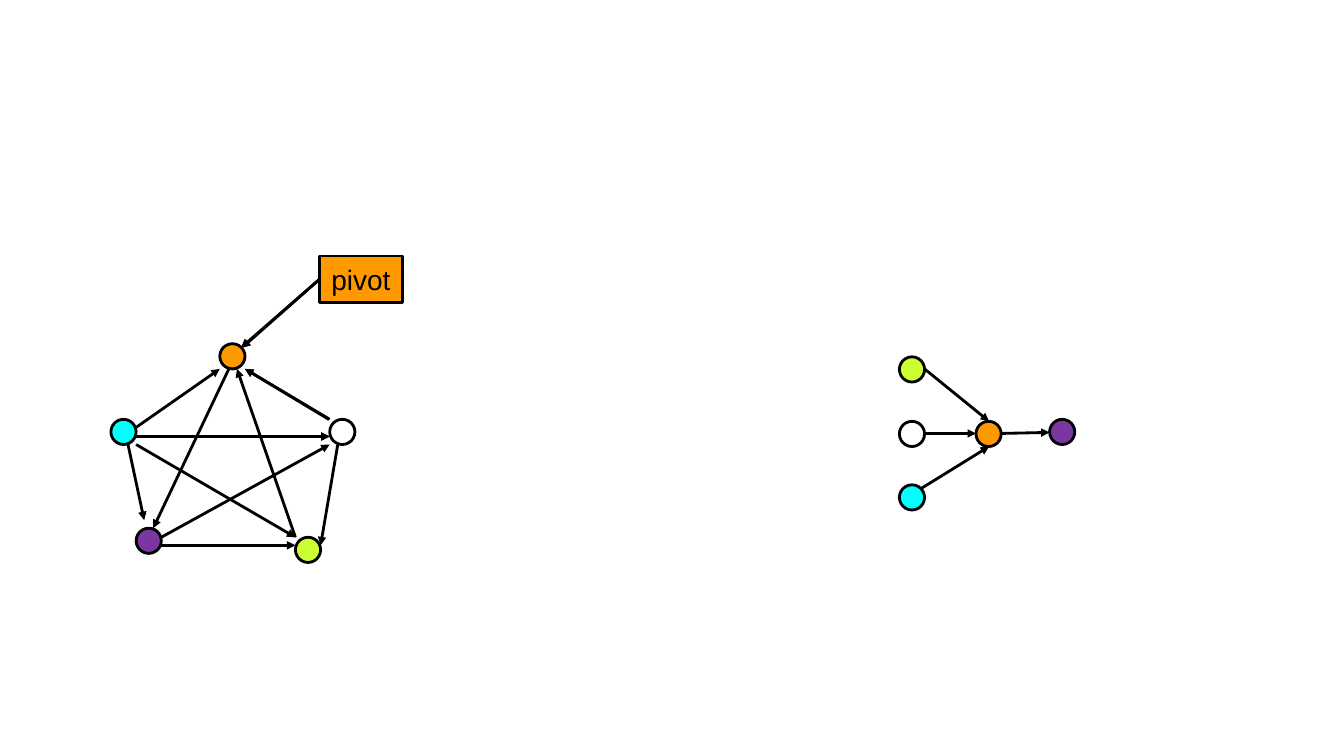
from pptx import Presentation
from pptx.dml.color import RGBColor
from pptx.enum.shapes import MSO_CONNECTOR, MSO_SHAPE
from pptx.enum.text import MSO_ANCHOR, MSO_AUTO_SIZE, PP_ALIGN
from pptx.oxml.ns import qn
from pptx.util import Inches, Pt
from lxml.etree import SubElement

COLORS = {"black": "000000", "orange": "FF9900", "white": "FFFFFF",
          "cyan": "00FFFF", "lime": "CCFF33", "purple": "7B36A2"}
NODE_SIZE = 0.25

# Tournament graph: arrows behind and in front of its nodes
BACK_ARROWS = [
    (1.6, 5.41, 2.93, 5.41), (1.27, 4.41, 1.43, 5.16),
    (1.35, 4.33, 3.27, 4.33), (3.27, 4.41, 3.27, 4.41),
    (1.6, 5.33, 3.27, 4.41), (1.35, 4.41, 2.93, 5.33),
]
TOURNAMENT_NODES = [
    ("orange", 2.18, 3.41), ("white", 3.27, 4.16), ("cyan", 1.1, 4.16),
    ("lime", 2.93, 5.33), ("purple", 1.35, 5.24),
]
FRONT_ARROWS = [
    (2.18, 4.33, 3.27, 4.33), (3.35, 4.41, 3.18, 5.41),
    (1.35, 4.24, 2.18, 3.66), (2.27, 3.66, 1.52, 5.24),
    (2.93, 5.33, 2.35, 3.66), (3.27, 4.16, 2.43, 3.66),
    (3.26, 4.16, 2.43, 3.66),
]
PIVOT_TARGETS = [(2.4, 3.45), (2.39, 3.45)]

# Partition around the pivot
PARTITION_NODES = [
    ("orange", 9.68, 4.18), ("lime", 8.92, 3.54), ("white", 8.92, 4.18),
    ("cyan", 8.92, 4.81), ("purple", 10.41, 4.16),
]
PARTITION_ARROWS = [
    (9.17, 3.66, 9.81, 4.18), (9.17, 4.3, 9.68, 4.3),
    (9.13, 4.85, 9.81, 4.43), (9.93, 4.3, 10.41, 4.29),
]


def rgb(name):
    return RGBColor.from_string(COLORS[name])


def set_line(line):
    line.color.rgb = rgb("black")
    line.width = Pt(2)


def add_filled(s, kind, color, x, y, w, h):
    sp = s.shapes.add_shape(kind, Inches(x), Inches(y), Inches(w), Inches(h))
    sp.shadow.inherit = False
    sp.fill.solid()
    sp.fill.fore_color.rgb = rgb(color)
    set_line(sp.line)
    return sp


def add_nodes(s, nodes):
    for color, x, y in nodes:
        add_filled(s, MSO_SHAPE.OVAL, color, x, y, NODE_SIZE, NODE_SIZE)


def add_arrow(s, x1, y1, x2, y2):
    cxn = s.shapes.add_connector(MSO_CONNECTOR.STRAIGHT, Inches(x1), Inches(y1),
                                 Inches(x2), Inches(y2))
    set_line(cxn.line)
    SubElement(cxn.line._get_or_add_ln(), qn("a:tailEnd"), type="triangle")
    SubElement(cxn._element.spPr, qn("a:effectLst"))
    return cxn


def add_arrows(s, arrows):
    for ends in arrows:
        add_arrow(s, *ends)


def add_label(s, text, color, x, y, w, h):
    sp = add_filled(s, MSO_SHAPE.RECTANGLE, color, x, y, w, h)
    tf = sp.text_frame
    frame_format = {"word_wrap": False, "auto_size": MSO_AUTO_SIZE.SHAPE_TO_FIT_TEXT,
                    "vertical_anchor": MSO_ANCHOR.MIDDLE}
    for name, value in frame_format.items():
        setattr(tf, name, value)
    p = tf.paragraphs[0]
    p.alignment = PP_ALIGN.CENTER
    r = p.add_run()
    r.text = text
    for name, value in {"name": "Arial", "size": Pt(20)}.items():
        setattr(r.font, name, value)
    r.font.color.rgb = rgb("black")
    return sp


def main():
    prs = Presentation()
    prs.slide_width, prs.slide_height = Inches(13.33), Inches(7.5)
    s = prs.slides.add_slide(prs.slide_layouts[6])

    # Tournament graph
    add_arrows(s, BACK_ARROWS)
    pivot = add_label(s, "pivot", "orange", 3.17, 2.54, 0.82, 0.46)
    add_nodes(s, TOURNAMENT_NODES)
    add_arrows(s, FRONT_ARROWS)
    for x, y in PIVOT_TARGETS:
        add_arrow(s, 3.17, 2.77, x, y).begin_connect(pivot, 1)

    # Partition
    add_nodes(s, PARTITION_NODES)
    add_arrows(s, PARTITION_ARROWS)

    prs.save("out.pptx")


if __name__ == "__main__":
    main()
